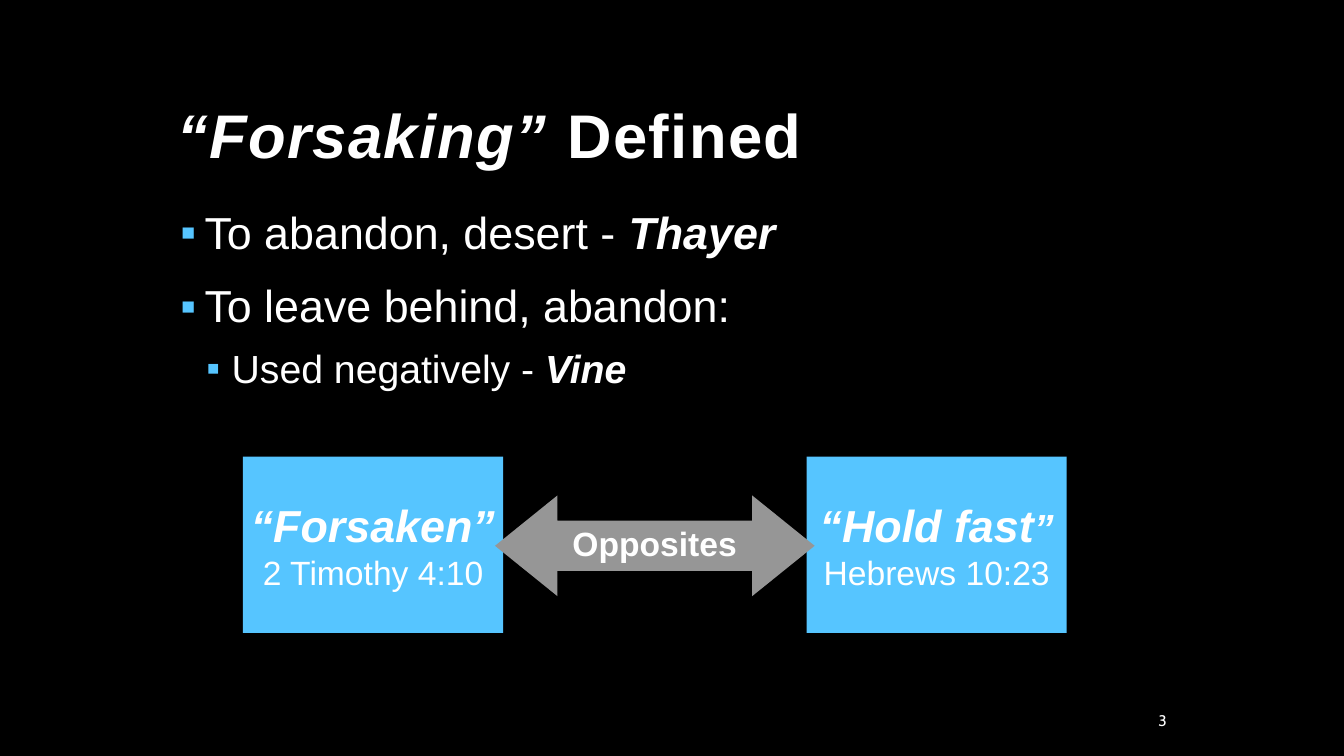
from lxml import etree
from pptx import Presentation
from pptx.dml.color import RGBColor
from pptx.enum import shapes, text
from pptx.oxml.ns import qn
from pptx.util import Inches, Pt

WHITE, BLUE, GRAY, BLACK = "FFFFFF", "56C5FF", "969696", "000000"
ALIGN, ANCHOR = text.PP_ALIGN, text.MSO_ANCHOR


def color(hex_value):
    """Turn a hex string into a colour."""
    return RGBColor.from_string(hex_value)


def style(font, size, name="Arial", bold=None, italic=None):
    """Set white type on a paragraph or run font."""
    font.name, font.size, font.bold, font.italic = name, Pt(size), bold, italic
    font.color.rgb = color(WHITE)


def add_text(slide, box, anchor=ANCHOR.TOP):
    """Add a wrapping text box and return its frame."""
    frame = slide.shapes.add_textbox(*map(Inches, box)).text_frame
    frame.word_wrap = True
    frame.vertical_anchor = anchor
    return frame


def add_block(slide, kind, box, fill):
    """Add a flat shape without an outline."""
    shape = slide.shapes.add_shape(kind, *map(Inches, box))
    shape.shadow.inherit = False
    shape.fill.solid()
    shape.fill.fore_color.rgb = color(fill)
    shape.line.fill.background()
    return shape


def add_title(slide, box):
    """Write the letter-spaced heading at the bottom of its box."""
    paragraph = add_text(slide, box, ANCHOR.BOTTOM).paragraphs[0]
    paragraph.line_spacing = 0.9
    style(paragraph.font, 44, bold=True)
    for words, italic in (("“Forsaking”", True), (" Defined", False)):
        run = paragraph.add_run()
        run.text = words
        style(run.font, 44, bold=True, italic=italic)
        run.font._element.set("spc", "100")


def add_bullet(paragraph, margin, hanging):
    """Give a paragraph a blue square bullet with a hanging indent."""
    properties = paragraph._p.get_or_add_pPr()
    properties.set("marL", str(Inches(margin)))
    properties.set("indent", str(-Inches(hanging)))
    bullet_color = etree.SubElement(properties, qn("a:buClr"))
    etree.SubElement(bullet_color, qn("a:srgbClr"), val=BLUE)
    etree.SubElement(properties, qn("a:buFont"), typeface="Arial")
    etree.SubElement(properties, qn("a:buChar"), char="▪")


def add_definitions(slide, box):
    """List the definitions with their sources in bold italics."""
    definitions = (
        ("To abandon, desert - ", "Thayer", 0),
        ("To leave behind, abandon:", "", 0),
        ("Used negatively - ", "Vine", 1),
    )
    levels = ((0.24, 0.24, 32, 18), (0.51, 0.25, 28, 12))
    frame = add_text(slide, box)
    for index, (meaning, author, level) in enumerate(definitions):
        margin, hanging, size, space = levels[level]
        paragraph = frame.add_paragraph() if index else frame.paragraphs[0]
        paragraph.level = level
        add_bullet(paragraph, margin, hanging)
        paragraph.line_spacing = 0.9
        if index:
            paragraph.space_before = Pt(space)
        style(paragraph.font, size)
        for words, strong in ((meaning, False), (author, True)):
            if words:
                run = paragraph.add_run()
                run.text = words
                style(run.font, size, bold=strong, italic=strong)


def add_card(slide, box, term_runs, verse):
    """Draw a blue card holding a term above its verse."""
    frame = add_block(slide, shapes.MSO_SHAPE.RECTANGLE, box, BLUE).text_frame
    frame.word_wrap = False
    frame.vertical_anchor = ANCHOR.MIDDLE
    term, reference = frame.paragraphs[0], frame.add_paragraph()
    term.alignment = reference.alignment = ALIGN.CENTER
    for words, size in term_runs:
        run = term.add_run()
        run.text = words
        style(run.font, size, bold=True, italic=True)
    reference.text = verse
    style(reference.font, 24)


def add_comparison(slide, box):
    """Set two cards at the ends of the box, joined by a labelled arrow."""
    left, top, width, height = box
    card_width, overlap, arrow_height = 2.58, 0.08, 1
    cards = (
        (left, (("“Forsaken”", 32),), "2 Timothy 4:10"),
        (left + width - card_width, (("“Hold fast", 32), ("”", 28)), "Hebrews 10:23"),
    )
    for card_left, term_runs, verse in cards:
        add_card(slide, (card_left, top, card_width, height), term_runs, verse)

    arrow_left = left + card_width - overlap
    arrow_top = top + (height - arrow_height) / 2 + 0.01
    arrow_width = width - 2 * (card_width - overlap)
    arrow = add_block(slide, shapes.MSO_SHAPE.LEFT_RIGHT_ARROW,
                      (arrow_left, arrow_top, arrow_width, arrow_height), GRAY)
    arrow.adjustments[0], arrow.adjustments[1] = 0.5, 0.62

    label = add_text(slide, (arrow_left + 0.67, arrow_top + 0.22, 2, 0.5))
    label.text = "Opposites"
    style(label.paragraphs[0].font, 24, bold=True)


def add_page_number(slide, box):
    """Write the page number at the right of its box."""
    frame = add_text(slide, box, ANCHOR.MIDDLE)
    frame.text = "3"
    paragraph = frame.paragraphs[0]
    paragraph.alignment = ALIGN.RIGHT
    style(paragraph.font, 11, name="Cabin")


def main():
    """Build the slide and save it."""
    presentation = Presentation()
    presentation.slide_width, presentation.slide_height = Inches(13.33), Inches(7.5)
    slide = presentation.slides.add_slide(presentation.slide_layouts[6])
    slide.background.fill.solid()
    slide.background.fill.fore_color.rgb = color(BLACK)
    add_title(slide, (1.66, 0.25, 10, 1.5))
    add_definitions(slide, (1.69, 2.04, 9, 1.92))
    add_comparison(slide, (2.41, 4.53, 8.17, 1.75))
    add_page_number(slide, (10.75, 7, 0.92, 0.3))
    presentation.save("out.pptx")


if __name__ == "__main__":
    main()
